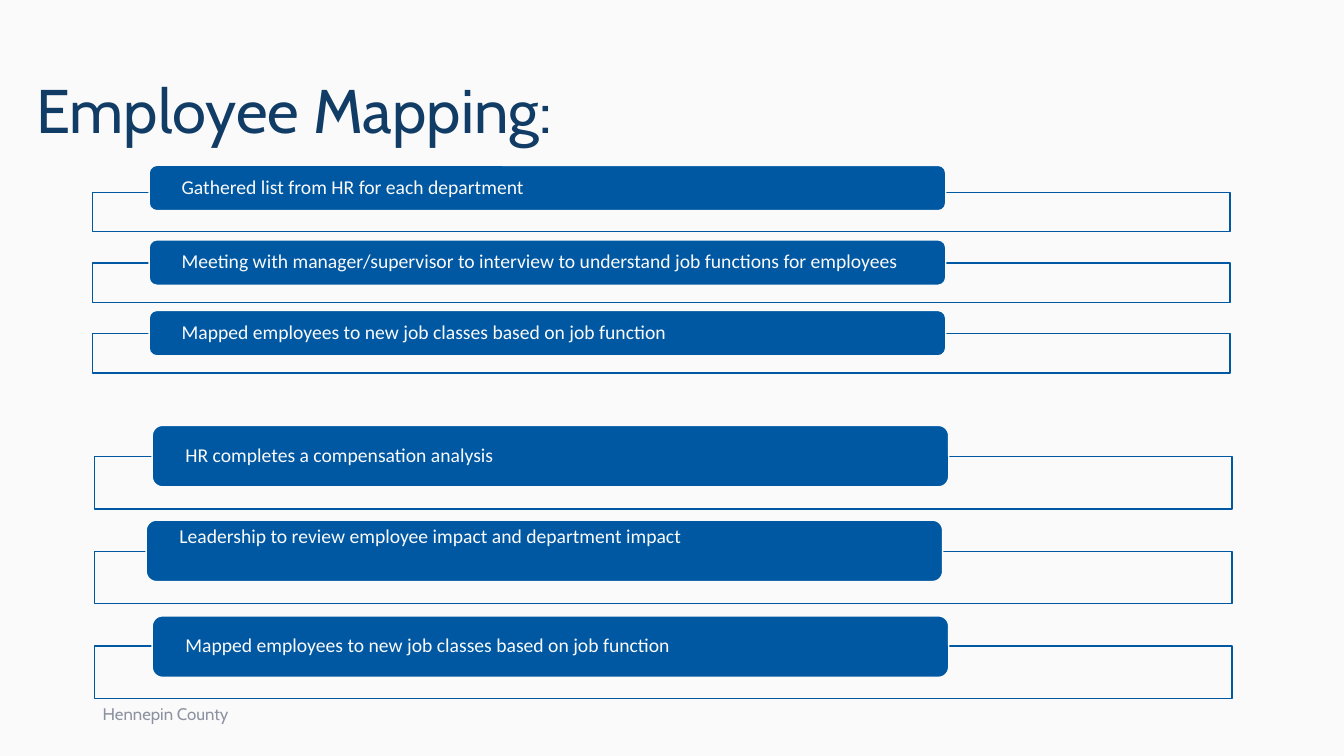
from lxml.etree import SubElement
from pptx import Presentation
from pptx.dml.color import RGBColor
from pptx.enum.shapes import MSO_SHAPE as Shape
from pptx.enum.text import MSO_ANCHOR as Anchor, MSO_AUTO_SIZE as AutoSize, PP_ALIGN as Align
from pptx.oxml.ns import qn
from pptx.util import Pt

PX = 9144  # EMU, 100 px to the inch
COLORS = {"paper": "FAFAFA", "blue": "0058A3", "navy": "113C66", "gray": "8C92A0"}
TITLE_ONLY = 5

# Each group: frame left, first frame top, pitch, frame height, bar height,
# then rows of bar left, bar top, anchor, text.
GROUPS = [
    (92, 191, 70, 39, 45, [
        (148, 164, Anchor.MIDDLE, "Gathered list from HR for each department"),
        (148, 238, Anchor.MIDDLE, "Meeting with manager/supervisor to interview "
                                  "to understand job functions for employees"),
        (148, 308, Anchor.MIDDLE, "Mapped employees to new job classes based on job function"),
    ]),
    (94, 453, 94, 52, 61, [
        (151, 422, Anchor.MIDDLE, "HR completes a compensation analysis"),
        (145, 516, Anchor.TOP, "Leadership to review employee impact and department impact"),
        (151, 611, Anchor.MIDDLE, "Mapped employees to new job classes based on job function"),
    ]),
]


def rgb(name):
    return RGBColor.from_string(COLORS[name])


class SlideBuilder:
    def __init__(self, deck):
        self.slide = deck.slides.add_slide(deck.slide_layouts[TITLE_ONLY])
        fill = self.slide.background.fill
        fill.solid()
        fill.fore_color.rgb = rgb("paper")

    def set_text(self, shape, text, font, size, color, anchor=Anchor.MIDDLE, spacing=1.0):
        frame = shape.text_frame
        frame.text = text
        frame.word_wrap = True
        frame.auto_size = AutoSize.NONE
        frame.vertical_anchor = anchor
        para = frame.paragraphs[0]
        para.alignment = Align.LEFT
        para.line_spacing = spacing
        span = para.runs[0]
        span.font.name = font
        span.font.size = Pt(size)
        span.font.color.rgb = rgb(color)

    def title(self, text, left, top, width, height):
        title = self.slide.shapes.title
        title.left, title.top = left * PX, top * PX
        title.width, title.height = width * PX, height * PX
        self.set_text(title, text, "Cabin", 44, "navy", spacing=0.9)

    def label(self, text, left, top, width, height):
        box = self.slide.shapes.add_textbox(left * PX, top * PX, width * PX, height * PX)
        self.set_text(box, text, "Cabin", 12, "gray")

    def block(self, group, kind, left, top, width, height, fill, line):
        shape = group.shapes.add_shape(kind, left * PX, top * PX, width * PX, height * PX)
        shape.shadow.inherit = False
        shape.fill.solid()
        shape.fill.fore_color.rgb = rgb(fill)
        shape.line.color.rgb = rgb(line)
        shape.line.width = Pt(1)
        return shape

    def frame(self, group, left, top, height):
        frame = self.block(group, Shape.RECTANGLE, left, top, 1128, height, "paper", "blue")
        color = frame.element.spPr.find(qn("a:solidFill"))[0]
        SubElement(color, qn("a:alpha")).set("val", "90000")

    def bar(self, group, text, left, top, height, anchor):
        bar = self.block(group, Shape.ROUNDED_RECTANGLE, left, top, 790, height, "blue", "paper")
        self.set_text(bar, text, "Calibri", 14, "paper", anchor, 0.9)
        frame = bar.text_frame
        frame.margin_left = frame.margin_right = 30 * PX
        frame.margin_top = frame.margin_bottom = 3 * PX

    def steps(self, left, top, pitch, frame_height, bar_height, rows):
        """Draw one group of steps, each a bar laid over an outlined frame."""
        group = self.slide.shapes.add_group_shape()
        for index, (bar_left, bar_top, anchor, text) in enumerate(rows):
            self.frame(group, left, top + index * pitch, frame_height)
            self.bar(group, text, bar_left, bar_top, bar_height, anchor)


def main():
    deck = Presentation()
    deck.slide_width, deck.slide_height = 1333 * PX, 750 * PX
    page = SlideBuilder(deck)
    page.title("Employee Mapping:", 26, 40, 659, 145)
    first, second = GROUPS
    page.steps(*first)
    page.label("Hennepin County", 92, 688, 409, 40)
    page.steps(*second)
    deck.save("out.pptx")


if __name__ == "__main__":
    main()
